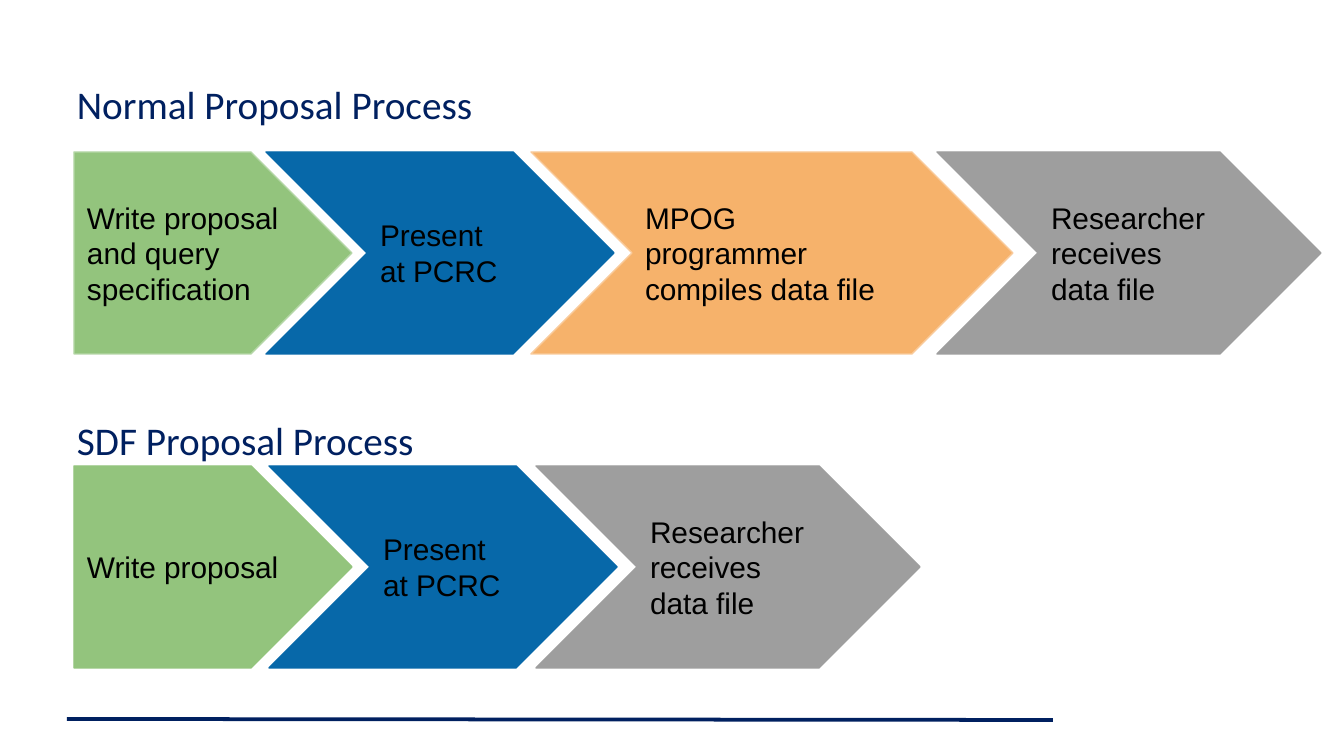
from pptx import Presentation
from pptx.dml.color import RGBColor
from pptx.enum.shapes import MSO_CONNECTOR, MSO_SHAPE
from pptx.enum.text import MSO_ANCHOR, PP_ALIGN
from pptx.oxml.ns import qn
from pptx.util import Emu, Pt
from lxml.etree import SubElement

COLORS = {
    "navy": "002060",
    "black": "000000",
    "green": "93C47D",
    "pale_green": "B6D7A8",
    "blue": "0768A9",
    "orange": "F6B26B",
    "pale_orange": "F9CB9C",
    "gray": "9E9E9E",
}
TITLE_HEIGHT = 58
STEP_HEIGHT = 202


def px(length):
    return Emu(round(length * 914400 / 134.4))


def color(name):
    return RGBColor.from_string(COLORS[name])


def write(shape, words, font, size, ink, anchor, inset_x, inset_y):
    frame = shape.text_frame
    frame.word_wrap = True
    frame.vertical_anchor = anchor
    frame.margin_left = frame.margin_right = px(inset_x)
    frame.margin_top = frame.margin_bottom = px(inset_y)
    para = frame.paragraphs[0]
    para.alignment = PP_ALIGN.LEFT
    span = para.add_run()
    span.text = words
    span.font.name = font
    span.font.size = Pt(size)
    span.font.color.rgb = color(ink)


def add_title(page, left, top, words):
    box = page.shapes.add_textbox(px(left), px(top), px(1210), px(TITLE_HEIGHT))
    write(box, words, "Calibri", 21, "navy", MSO_ANCHOR.BOTTOM, 10, 5)


def add_step(page, left, top, width, kind, fill, outline, words):
    step = page.shapes.add_shape(kind, px(left), px(top), px(width), px(STEP_HEIGHT))
    step.shadow.inherit = False
    step.adjustments[0] = 0.5
    step.fill.solid()
    step.fill.fore_color.rgb = color(fill)
    step.line.color.rgb = color(outline)
    step.line.width = Pt(0.75)
    write(step, words, "Arial", 16, "black", MSO_ANCHOR.MIDDLE, 13, 13)


def add_process(page, left, top, title, steps_top, steps):
    add_title(page, left, top, title)
    for index, (offset, width, fill, outline, words) in enumerate(steps):
        kind = MSO_SHAPE.CHEVRON if index else MSO_SHAPE.PENTAGON
        add_step(page, left + offset, top + steps_top, width, kind, fill, outline, words)


def add_footer_rule(page, left, top, width):
    rule = page.shapes.add_connector(
        MSO_CONNECTOR.STRAIGHT, px(left), px(top), px(left + width), px(top + 1)
    )
    rule.line.color.rgb = color("navy")
    rule.line.width = Pt(2)
    SubElement(rule._element.spPr, qn("a:effectLst"))


def main():
    deck = Presentation()
    deck.slide_width = px(1344)
    deck.slide_height = px(756)
    page = deck.slides.add_slide(deck.slide_layouts[6])
    add_footer_rule(page, 67, 719, 986)
    add_process(page, 67, 74, "Normal Proposal Process", 78, [
        (7, 278, "green", "pale_green", "Write proposal and query specification"),
        (199, 348, "blue", "blue", "Present at PCRC"),
        (464, 482, "orange", "pale_orange", "MPOG programmer compiles data file"),
        (870, 384, "gray", "gray", "Researcher receives data file"),
    ])
    add_process(page, 67, 410, "SDF Proposal Process", 56, [
        (7, 278, "green", "green", "Write proposal"),
        (202, 348, "blue", "blue", "Present at PCRC"),
        (469, 384, "gray", "gray", "Researcher receives data file"),
    ])
    deck.save("out.pptx")


if __name__ == "__main__":
    main()
